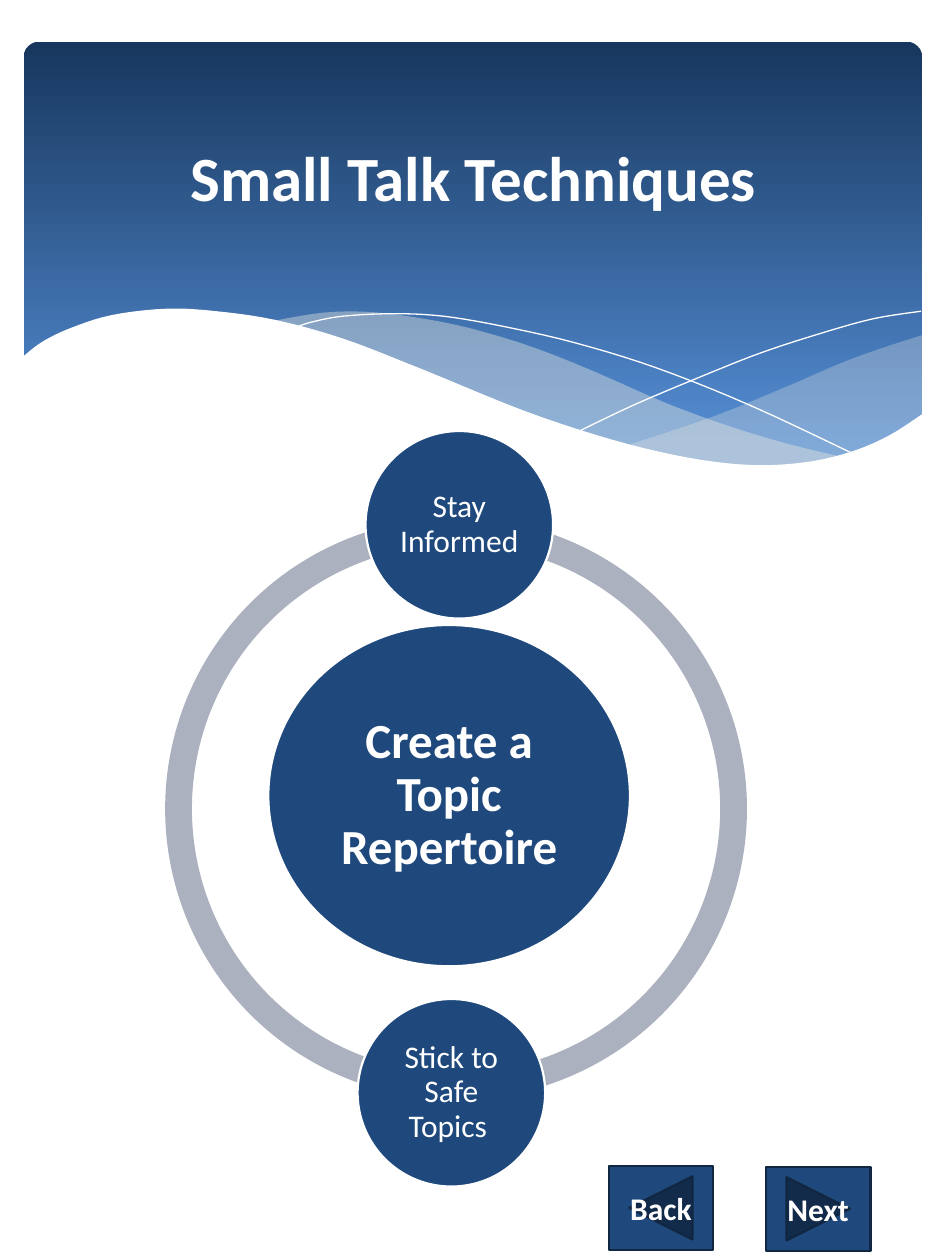
from lxml import etree
from pptx import Presentation
from pptx.dml.color import RGBColor
from pptx.enum.shapes import MSO_SHAPE as Preset
from pptx.enum.text import MSO_ANCHOR as Anchor, PP_ALIGN as Align
from pptx.oxml.ns import qn
from pptx.util import Cm, Pt

COLORS = {
    "navy": "17375E", "sky": "558ED5", "cream": "EEECE1", "white": "FFFFFF",
    "ring": "ACB1BF", "blue": "1F497D", "edge": "102641",
}
RGB = {name: RGBColor.from_string(value) for name, value in COLORS.items()}
STEPS = 5


def smooth(anchors):
    padded = [anchors[0], *anchors, anchors[-1]]
    points = [anchors[0]]
    for a, b, c, d in zip(padded, padded[1:], padded[2:], padded[3:]):
        for step in range(1, STEPS + 1):
            t = step / STEPS
            points.append(tuple(
                0.5 * (2 * q + (r - p) * t + (2 * p - 5 * q + 4 * r - s) * t**2
                       + (3 * q - p - 3 * r + s) * t**3)
                for p, q, r, s in zip(a, b, c, d)))
    return points


def write(shape, text, size, bold, inset, spacing):
    frame = shape.text_frame
    frame.word_wrap = True
    frame.vertical_anchor = Anchor.MIDDLE
    frame.margin_left = frame.margin_right = Cm(inset)
    frame.margin_top = frame.margin_bottom = Cm(min(inset, 0.13))
    paragraph = frame.paragraphs[0]
    paragraph.text = text
    paragraph.alignment = Align.CENTER
    paragraph.line_spacing = spacing
    paragraph.font.name = "Calibri"
    paragraph.font.size = Pt(size)
    paragraph.font.bold = bold
    paragraph.font.color.rgb = RGB["white"]


deck = Presentation()
deck.slide_width, deck.slide_height = Cm(19.05), Cm(25.4)
slide = deck.slides.add_slide(deck.slide_layouts[6])
shapes = slide.shapes

banner = shapes.add_shape(Preset.ROUNDED_RECTANGLE, Cm(0.48), Cm(0.84), Cm(18.11), Cm(9.14))
banner.adjustments[0] = 0.034
banner.shadow.inherit = False
banner.line.fill.background()
banner.fill.gradient()
banner.fill.gradient_angle = 270
for stop, color, position in zip(banner.fill.gradient_stops, ("navy", "sky"), (0, 0.9)):
    stop.color.rgb = RGB[color]
    stop.position = position

right_crest = [(7.32, 2.66), (7.01, 2.76), (6.68, 2.88), (6.24, 3.07), (5.65, 3.31), (4.96, 3.54)]
right_trough = [(4.96, 3.54), (5.39, 3.63), (5.77, 3.69), (6.18, 3.7), (6.54, 3.66),
                (6.85, 3.56), (7.12, 3.43), (7.32, 3.29)]
middle_crest = [(6.7, 3.63), (6.28, 3.53), (5.81, 3.39), (5.29, 3.2), (4.72, 2.95), (4.27, 2.77),
                (3.86, 2.64), (3.48, 2.55), (2.99, 2.48), (2.58, 2.48), (2.15, 2.55)]
middle_trough = [(2.15, 2.55), (2.57, 2.66), (3.03, 2.81), (3.37, 2.95), (3.97, 3.21),
                 (4.51, 3.4), (4.99, 3.55), (5.42, 3.65), (5.8, 3.7), (6.21, 3.71), (6.7, 3.63)]
falling_line = [(2.32, 2.61), (2.46, 2.56), (2.72, 2.51), (3.12, 2.49), (3.52, 2.51), (3.99, 2.59),
                (4.56, 2.72), (5.21, 2.92), (5.96, 3.22), (6.81, 3.62)]
rising_line = [(4.6, 3.42), (5.04, 3.21), (5.61, 2.97), (6.04, 2.8), (6.5, 2.65), (6.93, 2.53), (7.31, 2.47)]
page_edge = [(7.33, 3.28), (7.05, 3.46), (6.74, 3.59), (6.38, 3.67), (5.95, 3.69), (5.45, 3.63),
             (4.86, 3.49), (4.16, 3.26), (3.35, 2.93), (2.73, 2.69), (2.19, 2.54), (1.72, 2.47),
             (1.32, 2.45), (0.89, 2.5), (0.57, 2.6), (0.34, 2.71), (0.17, 2.84)]

waves = [
    (smooth(right_crest) + smooth(right_trough), "cream", 29),
    (smooth(middle_crest) + smooth(middle_trough), "cream", 40),
    (smooth(falling_line), None, None),
    (smooth(rising_line), None, None),
    (smooth(page_edge) + [(0.17, 4.39), (7.33, 4.39)], "white", 100),
]
for curve, color, opacity in waves:
    points = [(Cm(2.54 * x), Cm(2.54 * y)) for x, y in curve]
    outline = shapes.build_freeform(*points[0])
    outline.add_line_segments(points[1:], close=color is not None)
    wave = outline.convert_to_shape()
    wave.shadow.inherit = False
    if color is None:
        wave.fill.background()
        wave.line.color.rgb = RGB["white"]
        wave.line.width = Pt(0)
        continue
    wave.line.fill.background()
    wave.fill.solid()
    wave.fill.fore_color.rgb = RGB[color]
    if opacity < 100:
        tint = wave.element.spPr.find(qn("a:solidFill"))[0]
        etree.SubElement(tint, qn("a:alpha"), val=str(opacity * 1000))

title = shapes.add_textbox(Cm(0.97), Cm(1.24), Cm(17.15), Cm(4.65))
write(title, "Small Talk Techniques", 36, True, 0.25, 1)

bottom_angle, top_angle = 54.478, 162.478
for start, end in ((bottom_angle, top_angle), (top_angle, bottom_angle)):
    arc = shapes.add_shape(Preset.BLOCK_ARC, Cm(3.33), Cm(10.44), Cm(11.73), Cm(11.73))
    for index, value in enumerate((start, end, 0.046)):
        arc.adjustments[index] = value
    arc.shadow.inherit = False
    arc.fill.solid()
    arc.fill.fore_color.rgb = RGB["ring"]
    arc.line.fill.background()

BACK, NEXT = Preset.ACTION_BUTTON_BACK_OR_PREVIOUS, Preset.ACTION_BUTTON_FORWARD_OR_NEXT
labelled = [
    (Preset.OVAL, 5.41, 12.6, 7.29, 6.88, "Create a Topic Repertoire", 28, True, "white", 0.1, 0.9),
    (Preset.OVAL, 7.37, 8.69, 3.78, 3.78, "Stay Informed", 18, False, "white", 0.08, 0.9),
    (Preset.OVAL, 7.21, 20.14, 3.78, 3.78, "Stick to Safe Topics ", 18, False, "white", 0.08, 0.9),
    (BACK, 12.27, 23.5, 2.11, 1.7, "Back", 18, True, "edge", 0.25, 1),
    (NEXT, 15.44, 23.52, 2.11, 1.7, "Next", 18, True, "edge", 0.25, 1),
]
for preset, left, top, width, height, text, size, bold, border, inset, spacing in labelled:
    topic = shapes.add_shape(preset, Cm(left), Cm(top), Cm(width), Cm(height))
    topic.shadow.inherit = False
    topic.fill.solid()
    topic.fill.fore_color.rgb = RGB["blue"]
    topic.line.color.rgb = RGB[border]
    topic.line.width = Pt(1.25)
    write(topic, text, size, bold, inset, spacing)

deck.save("out.pptx")
